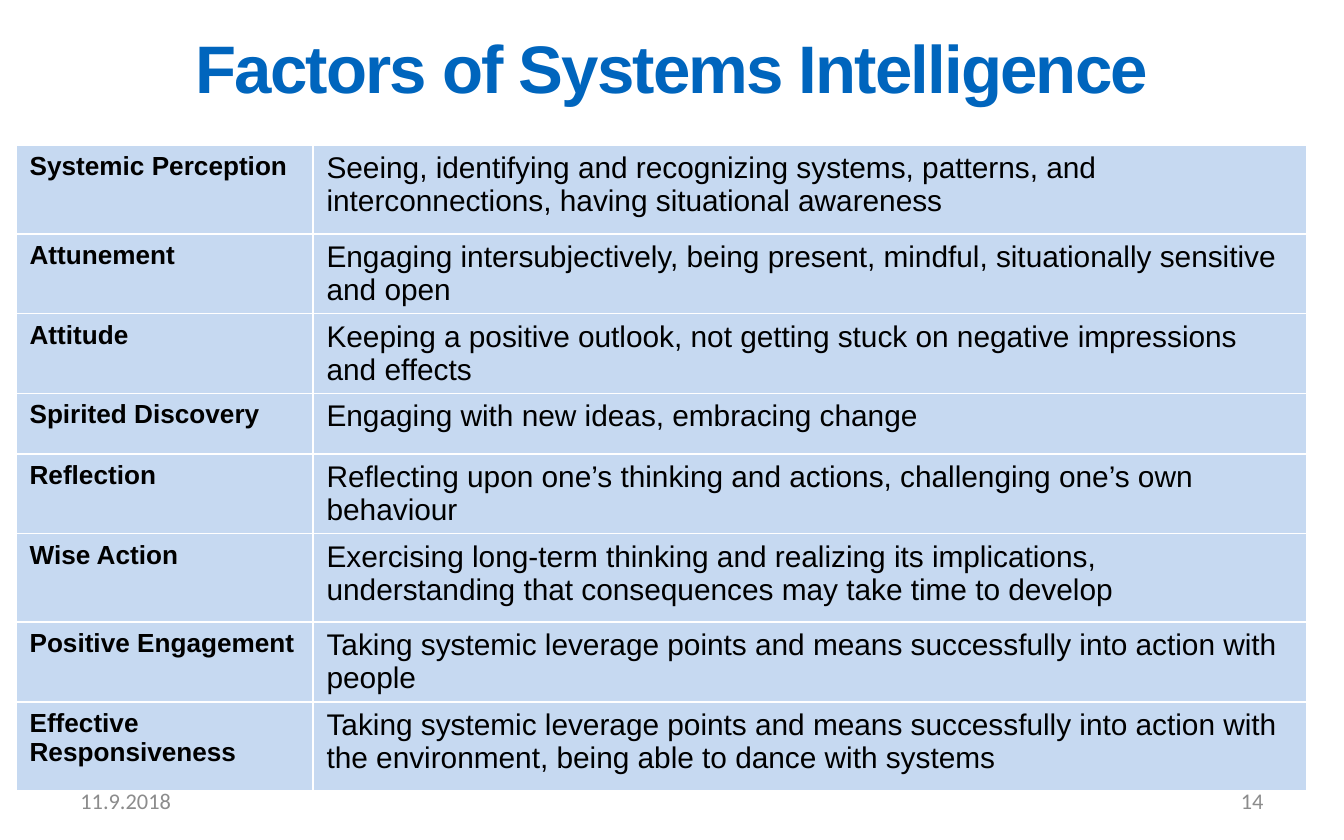
import pptx
import pptx.util
import pptx.dml.color
import pptx.enum.text

# Content
TITLE = "Factors of Systems Intelligence"
ROWS = [  # factor, meaning, row height in px
    ("Systemic Perception", "Seeing, identifying and recognizing systems, patterns, and "
     "interconnections, having situational awareness", 66),
    ("Attunement", "Engaging intersubjectively, being present, mindful, "
     "situationally sensitive and open", 45),
    ("Attitude", "Keeping a positive outlook, not getting stuck on negative "
     "impressions and effects", 45),
    ("Spirited Discovery", "Engaging with new ideas, embracing change", 45),
    ("Reflection", "Reflecting upon one’s thinking and actions, challenging "
     "one’s own behaviour", 45),
    ("Wise Action", "Exercising long-term thinking and realizing its implications, "
     "understanding that consequences may take time to develop", 66),
    ("Positive Engagement", "Taking systemic leverage points and means successfully "
     "into action with people", 45),
    ("Effective Responsiveness", "Taking systemic leverage points and means successfully "
     "into action with the environment, being able to dance with systems", 66),
]
COLS = [221, 739]
ALIGN = pptx.enum.text.PP_ALIGN
FOOT = [("11.9.2018", 50, ALIGN.LEFT), ("14", 717, ALIGN.RIGHT)]  # text, left, align

THEME = {  # style: font, size, colour, bold
    "title": ("Arial", 36, "0065BD", True),
    "factor": ("Arial", 14, "000000", True),
    "meaning": ("Arial", 16, "000000", False),
    "foot": ("Calibri", 12, "8C8C8C", False),
    "fill": "C6D9F1",
}


def px(n):
    """100 px to the inch."""
    return pptx.util.Emu(n * 9144)


def color(name):
    return pptx.dml.color.RGBColor.from_string(name)


def write(frame, text, style):
    frame.text = text
    font = frame.paragraphs[0].runs[0].font
    font.name, size, ink, font.bold = THEME[style]
    font.size = pptx.util.Pt(size)
    font.color.rgb = color(ink)
    return frame.paragraphs[0]


def main():
    deck = pptx.Presentation()
    deck.slide_width, deck.slide_height = px(1000), px(625)
    slide = deck.slides.add_slide(deck.slide_layouts[5])

    # Title
    title = slide.shapes.title
    title.left, title.top, title.width, title.height = map(px, (51, 29, 898, 109))
    frame = title.text_frame
    frame.margin_left = frame.margin_right = frame.margin_top = frame.margin_bottom = 0
    frame.vertical_anchor = pptx.enum.text.MSO_ANCHOR.TOP
    para = write(frame, TITLE, "title")
    para.alignment = ALIGN.CENTER
    para.line_spacing = 0.85
    para.runs[0].font._element.set("spc", "-100")  # tighter letters

    # Date and page number
    for text, left, align in FOOT:
        box = slide.shapes.add_textbox(px(left), px(579), px(233), px(33))
        box.text_frame.word_wrap = True
        box.text_frame.vertical_anchor = pptx.enum.text.MSO_ANCHOR.MIDDLE
        write(box.text_frame, text, "foot").alignment = align

    # Table of factors
    high = sum(row[2] for row in ROWS)
    table = slide.shapes.add_table(len(ROWS), len(COLS), px(12), px(108),
                                   px(sum(COLS)), px(high)).table
    table.first_row = table.horz_banding = False
    for col, width in zip(table.columns, COLS):
        col.width = px(width)
    for line, (factor, meaning, height) in zip(table.rows, ROWS):
        line.height = px(height)
        parts = [(factor, "factor"), (meaning, "meaning")]
        for cell, (text, style) in zip(line.cells, parts):
            cell.fill.solid()
            cell.fill.fore_color.rgb = color(THEME["fill"])
            cell.margin_bottom = px(1)  # keeps two-line rows clear of the footer
            write(cell.text_frame, text, style)

    deck.save("out.pptx")


if __name__ == "__main__":
    main()
